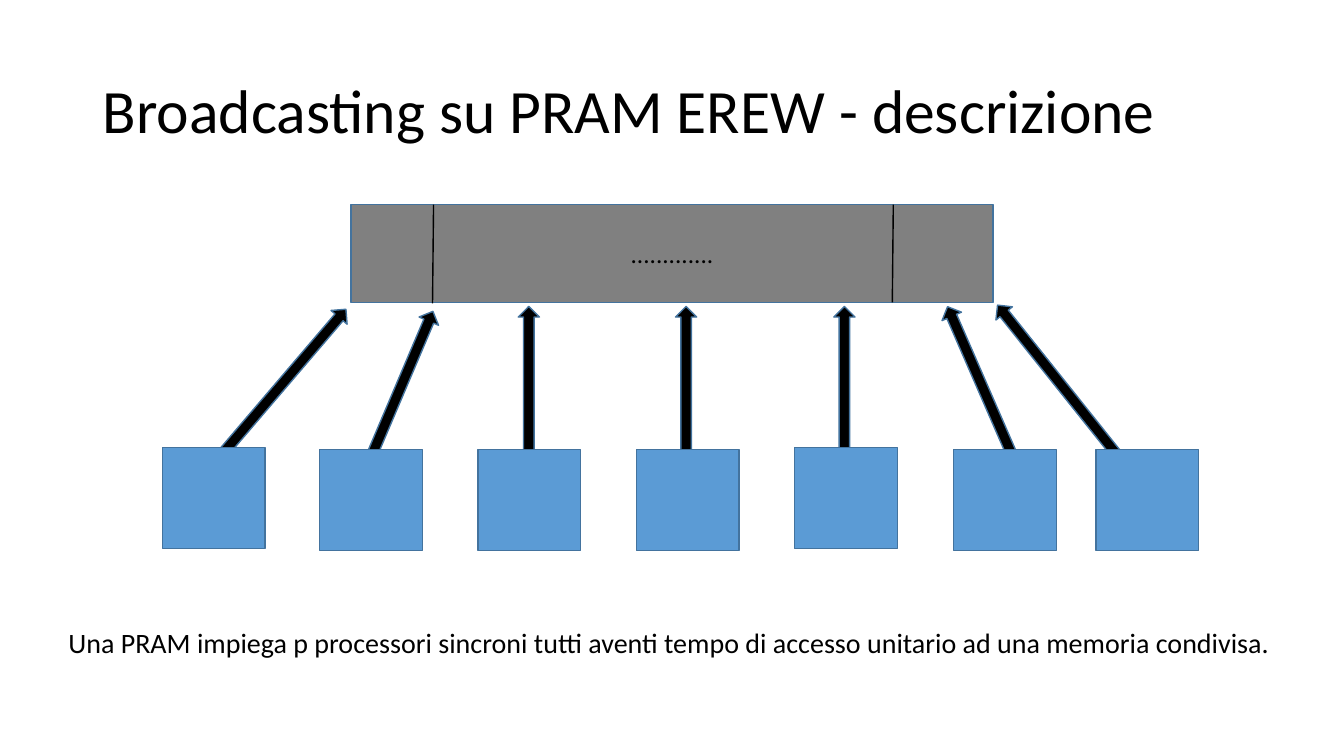
import pptx
import pptx.util
import pptx.dml.color
import pptx.enum.shapes
import pptx.enum.text
import lxml.etree

SLIDE_SIZE = (1333, 750)
TITLE = "Broadcasting su PRAM EREW - descrizione"
TITLE_BOX = (92, 40, 1150, 145)
CAPTION = ("Una PRAM impiega p processori sincroni tutti aventi tempo di accesso "
           "unitario ad una memoria condivisa.")
CAPTION_BOX = (58, 616, 1224, 111)
MEMORY_TEXT = "............."
MEMORY_BOX = (348, 203, 637, 97)
DIVIDERS = [(430, 203, 429, 301), (886, 203, 885, 300)]
PROCESSOR_SIZE = (102, 100)
ARROW_SIZE = (199, 21)
PROCESSORS = [
    {"at": (161, 444), "arrow": (179, 372), "angle": 310.5},
    {"at": (317, 446), "arrow": (291, 390), "angle": 293},
    {"at": (474, 446), "arrow": (425, 393), "angle": 270},
    {"at": (631, 446), "arrow": (581, 393), "angle": 270},
    {"at": (788, 444), "arrow": (738, 393), "angle": 270},
    {"at": (946, 446), "arrow": (880, 385), "angle": 246.5},
    {"at": (1087, 446), "arrow": (952, 370), "angle": 231.4},
]
COLORS = {"text": "000000", "memory": "808080", "processor": "5B9BD5",
          "arrow": "000000", "outline": "43739E", "divider": "000000"}
FONT = "Calibri"
PX = 9144

ALIGN = pptx.enum.text.PP_ALIGN
ANCHOR = pptx.enum.text.MSO_ANCHOR
SHAPE = pptx.enum.shapes.MSO_SHAPE


def emu(lengths):
    return [length * PX for length in lengths]


def color(name):
    return pptx.dml.color.RGBColor.from_string(COLORS[name])


def apply_format(target, values):
    for name, value in values.items():
        setattr(target, name, value)


def write_text(shape, text, size, frame_format, paragraph_format):
    frame = shape.text_frame
    frame.text = text
    apply_format(frame, frame_format)
    paragraph = frame.paragraphs[0]
    apply_format(paragraph, paragraph_format)
    font = paragraph.runs[0].font
    apply_format(font, {"name": FONT, "size": pptx.util.Pt(size)})
    font.color.rgb = color("text")


def draw_line(line, name):
    line.color.rgb = color(name)
    line.width = pptx.util.Pt(1)


def add_part(shapes, kind, box, fill, angle=0):
    shape = shapes.add_shape(kind, *emu(box))
    shape.shadow.inherit = False
    shape.rotation = angle
    shape.fill.solid()
    shape.fill.fore_color.rgb = color(fill)
    draw_line(shape.line, "outline")
    return shape


def main():
    presentation = pptx.Presentation()
    presentation.slide_width, presentation.slide_height = emu(SLIDE_SIZE)
    slide = presentation.slides.add_slide(presentation.slide_layouts[5])

    title = slide.shapes.title
    apply_format(title, dict(zip(("left", "top", "width", "height"), emu(TITLE_BOX))))
    write_text(title, TITLE, 44,
               {"vertical_anchor": ANCHOR.MIDDLE, "word_wrap": True,
                "auto_size": pptx.enum.text.MSO_AUTO_SIZE.NONE},
               {"alignment": ALIGN.LEFT, "line_spacing": 0.9})

    diagram = slide.shapes.add_group_shape().shapes
    memory = add_part(diagram, SHAPE.RECTANGLE, MEMORY_BOX, "memory")
    write_text(memory, MEMORY_TEXT, 18, {"vertical_anchor": ANCHOR.MIDDLE},
               {"alignment": ALIGN.CENTER})
    for processor in PROCESSORS:
        add_part(diagram, SHAPE.RIGHT_ARROW, processor["arrow"] + ARROW_SIZE,
                 "arrow", processor["angle"])
        add_part(diagram, SHAPE.RECTANGLE, processor["at"] + PROCESSOR_SIZE, "processor")

    for ends in DIVIDERS:
        divider = slide.shapes.add_connector(
            pptx.enum.shapes.MSO_CONNECTOR.STRAIGHT, *emu(ends))
        draw_line(divider.line, "divider")
        lxml.etree.SubElement(divider._element.spPr, pptx.oxml.ns.qn("a:effectLst"))

    caption = slide.shapes.add_textbox(*emu(CAPTION_BOX))
    write_text(caption, CAPTION, 20,
               {"vertical_anchor": ANCHOR.TOP, "word_wrap": False},
               {"alignment": ALIGN.LEFT})

    presentation.save("out.pptx")


if __name__ == "__main__":
    main()
